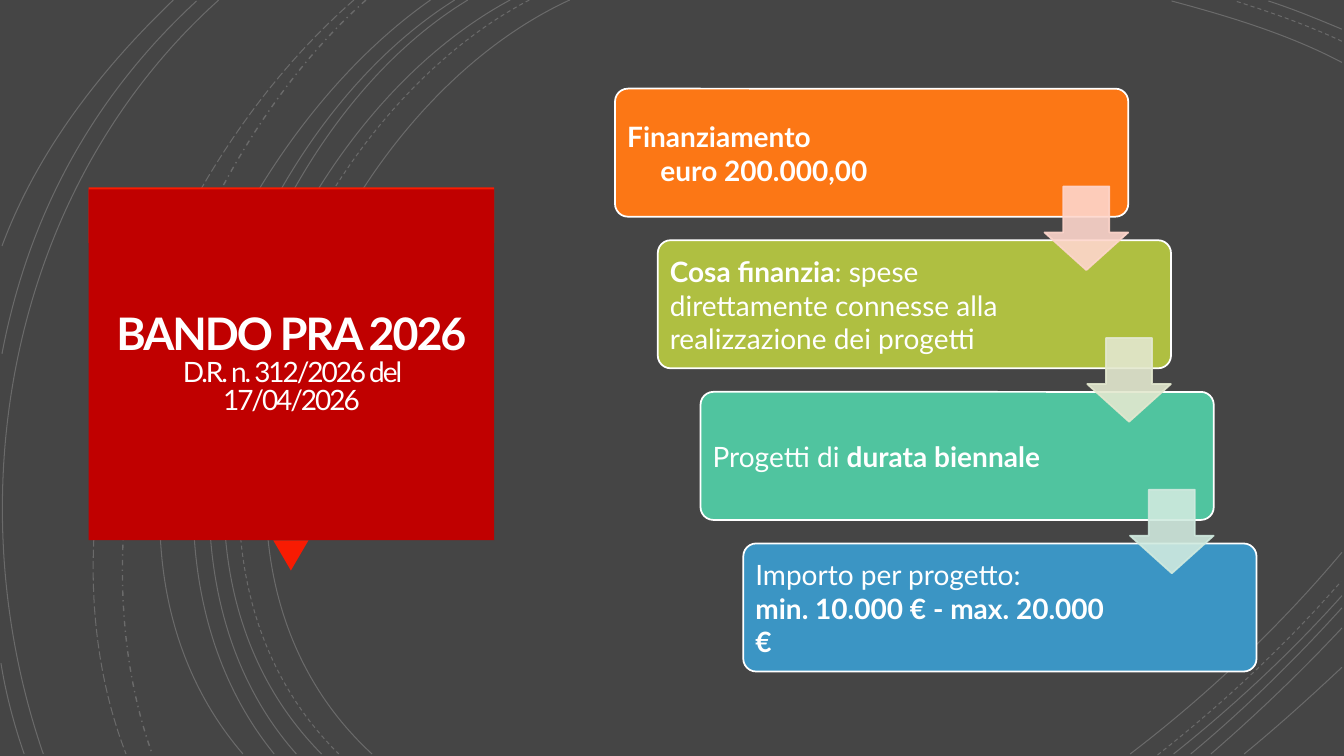
from pptx import Presentation
from pptx.dml.color import RGBColor
from pptx.enum.dml import MSO_LINE
from pptx.enum.shapes import MSO_SHAPE
from pptx.enum.text import MSO_ANCHOR, PP_ALIGN
from pptx.oxml.ns import qn
from pptx.util import Inches, Pt
from lxml import etree


def paint(fill, color, opacity=100):
    """Set a solid fill, with opacity in percent."""
    fill.solid()
    fill.fore_color.rgb = RGBColor.from_string(color)
    if opacity < 100:
        for clr in fill._xPr.iter(qn("a:srgbClr")):
            etree.SubElement(clr, qn("a:alpha")).set("val", str(opacity * 1000))


def add_run(p, text, size, bold):
    r = p.add_run()
    r.text = text
    r.font.name = "Lato"
    r.font.size = Pt(size)
    r.font.bold = bold
    paint(r.font.fill, "FFFFFF")
    return r


prs = Presentation()
prs.slide_width, prs.slide_height = Inches(13.33), Inches(7.5)
s = prs.slides.add_slide(prs.slide_layouts[6])
paint(s.background.fill, "454545")

# Background arcs: the four Bezier points of each, grouped by dash style
ARCS = {
    MSO_LINE.SOLID: [
        [(5.65, 0), (3.15, 1.15), (1.43, 5.4), (3.69, 7.48)],
        [(13.31, 0.62), (12.78, 0.34), (12.18, 0.16), (11.62, 0.01)],
        [(11.21, 7.48), (11.97, 6.9), (12.69, 6.22), (13.31, 5.48)],
        [(5.06, 0), (2.7, 1.27), (1.1, 5.37), (3.19, 7.48)],
        [(13.31, 0.29), (13.07, 0.19), (12.83, 0.09), (12.58, 0.01)],
        [(11.64, 7.48), (12.23, 7.01), (12.8, 6.48), (13.31, 5.91)],
        [(4.64, 0), (2.44, 1.33), (1.1, 5.41), (2.94, 7.48)],
        [(11.81, 7.48), (12.34, 7.04), (12.84, 6.55), (13.31, 6.03)],
        [(4.51, 0), (2.31, 1.38), (0.97, 5.33), (2.72, 7.48)],
        [(12.01, 7.48), (12.46, 7.09), (12.9, 6.67), (13.31, 6.23)],
        [(4.27, 0), (2.17, 1.47), (0.53, 5.29), (2.41, 7.48)],
        [(12.34, 7.48), (12.67, 7.21), (12.99, 6.92), (13.31, 6.62)],
        [(2.17, 0), (0.11, 1.85), (-0.46, 4.9), (0.43, 7.48)],
        [(1.95, 0.01), (0.92, 0.96), (0.28, 2.14), (0.02, 3.51)],
        [(0.01, 6.58), (0.06, 6.89), (0.14, 7.19), (0.24, 7.48)],
        [(1.72, 0), (1, 0.69), (0.37, 1.5), (0.02, 2.44)],
    ],
    MSO_LINE.DASH: [
        [(5.25, 0), (2.85, 1.25), (1.23, 5.37), (3.36, 7.48)],
        [(13.31, 0.41), (12.97, 0.25), (12.6, 0.12), (12.25, 0.01)],
        [(11.48, 7.49), (12.13, 6.98), (12.75, 6.4), (13.3, 5.77)],
    ],
    MSO_LINE.DASH_DOT: [[(3.63, 0), (1.76, 1.66), (0.65, 5.09), (1.51, 7.48)]],
    MSO_LINE.LONG_DASH: [[(3.51, 0), (1.57, 1.69), (0.29, 4.99), (1.25, 7.48)]],
}
for dash, arcs in ARCS.items():
    for arc in arcs:
        points = [(Inches(x), Inches(y)) for x, y in arc]
        builder = s.shapes.build_freeform(*points[0])
        builder.add_line_segments(points[1:], close=False)
        sp = builder.convert_to_shape()
        # Turn the three straight segments into one Bezier curve
        outline = next(sp._element.iter(qn("a:path")))
        curve = etree.SubElement(outline, qn("a:cubicBezTo"))
        for segment in outline.findall(qn("a:lnTo")):
            curve.append(segment[0])
            outline.remove(segment)
        sp.shadow.inherit = False
        sp.fill.background()
        paint(sp.line.fill, "FFFFFF", 20)
        sp.line.width = Pt(1 if dash == MSO_LINE.DASH_DOT else 0.75)
        sp.line.dash_style = dash

# Title panel: top edge, pointer, then the panel that holds the title
for kind, x, y, w, h, color, angle in [
    (MSO_SHAPE.RECTANGLE, 0.88, 1.86, 4.02, 0.55, "F81B02", 0),
    (MSO_SHAPE.ISOSCELES_TRIANGLE, 2.71, 5.36, 0.35, 0.3, "F81B02", 180),
    (MSO_SHAPE.RECTANGLE, 0.88, 1.88, 4.02, 3.48, "C00000", 0),
]:
    title = s.shapes.add_shape(kind, Inches(x), Inches(y), Inches(w), Inches(h))
    title.shadow.inherit = False
    title.rotation = angle
    paint(title.fill, color)
    title.line.fill.background()

tf = title.text_frame
tf.word_wrap = True
tf.vertical_anchor = MSO_ANCHOR.MIDDLE
tf.margin_left = tf.margin_right = tf.margin_top = tf.margin_bottom = Inches(0.25)
p = tf.paragraphs[0]
p.alignment = PP_ALIGN.CENTER
p.line_spacing = 0.85
heading = add_run(p, "BANDO PRA 2026", 32, True)
p.add_line_break()
decree = add_run(p, "D.R. n. 312/2026 del 17/04/2026", 20, False)
for r in (heading, decree):
    r.font._element.set("spc", "-150")

# Staircase of steps: colour, text width, indent of the second line, lines of runs
STEPS = [
    ("FC7715", 3.61, 0.33, [[("Finanziamento", True)], [("euro 200.000,00", True)]]),
    ("AFBF41", 3.77, 0, [[("Cosa finanzia", True),
                          (": spese direttamente connesse alla realizzazione dei progetti", False)]]),
    ("50C49F", 3.77, 0, [[("Progetti di ", False), ("durata biennale", True)]]),
    ("3B95C4", 3.77, 0, [[("Importo per progetto:", False)],
                         [("min. 10.000 € - max. 20.000 €", True)]]),
]
STEP_X, STEP_Y = 0.424, 1.504
for i, (color, text_width, indent, lines) in enumerate(STEPS):
    x, y = 6.1 + i * STEP_X, 0.88 + i * STEP_Y
    sp = s.shapes.add_shape(MSO_SHAPE.ROUNDED_RECTANGLE, Inches(x), Inches(y),
                            Inches(5.09), Inches(1.27))
    sp.adjustments[0] = 0.1
    sp.shadow.inherit = False
    paint(sp.fill, color)
    paint(sp.line.fill, "FFFFFF")
    sp.line.width = Pt(1.25)

    tf = s.shapes.add_textbox(Inches(x + 0.04), Inches(y + 0.04),
                              Inches(text_width), Inches(1.2)).text_frame
    tf.word_wrap = True
    tf.vertical_anchor = MSO_ANCHOR.MIDDLE
    tf.margin_left = tf.margin_right = tf.margin_top = tf.margin_bottom = Inches(0.08)
    p = tf.paragraphs[0]
    pPr = p._p.get_or_add_pPr()
    pPr.set("marL", str(Inches(indent)))
    pPr.set("indent", str(Inches(-indent)))
    for n, runs in enumerate(lines):
        if n:
            p.add_line_break()
        for text, bold in runs:
            add_run(p, text, 20, bold)

for i, color in enumerate(["FED6CC", "E3E8CF", "D0EADF"]):
    arrow = s.shapes.add_shape(MSO_SHAPE.DOWN_ARROW, Inches(10.36 + i * STEP_X),
                               Inches(1.85 + i * STEP_Y), Inches(0.83), Inches(0.83))
    arrow.adjustments[0] = 0.55
    arrow.adjustments[1] = 0.45
    arrow.shadow.inherit = False
    paint(arrow.fill, color, 90)
    paint(arrow.line.fill, color, 90)
    arrow.line.width = Pt(1.25)

prs.save("out.pptx")
